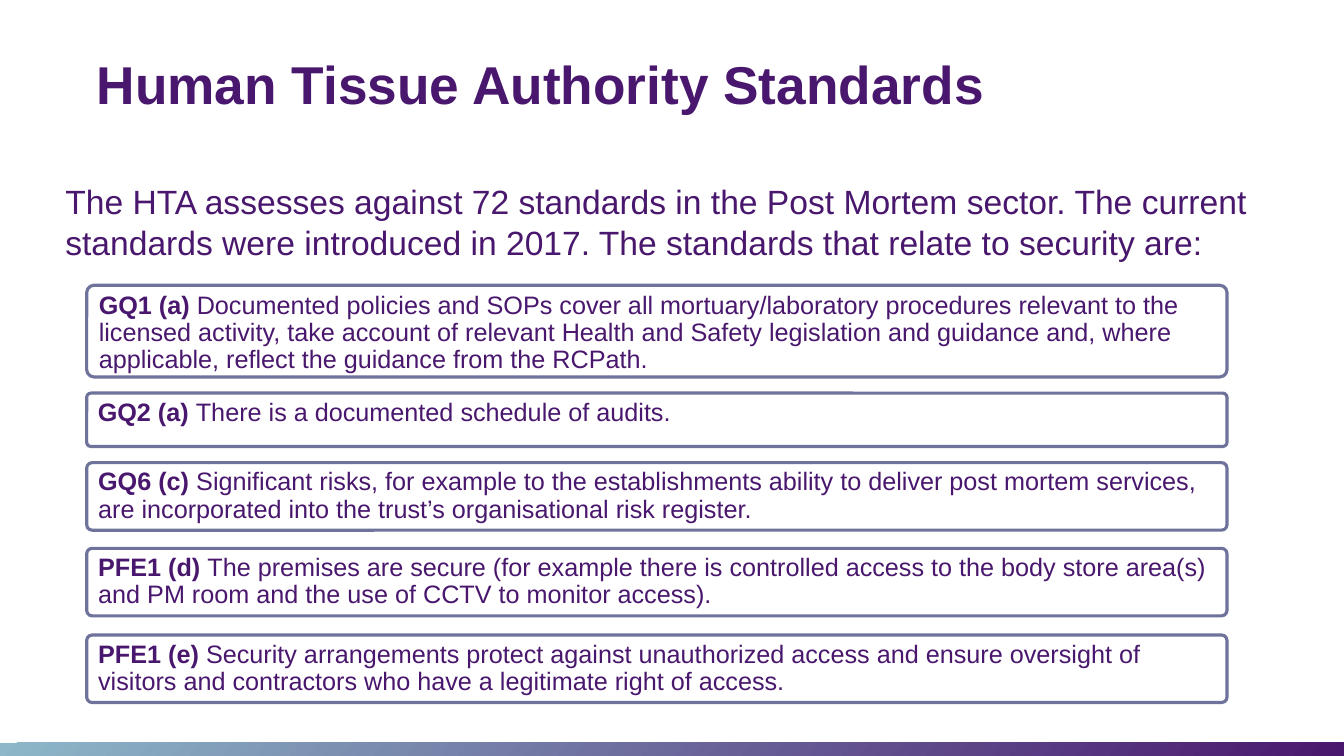
from pptx import Presentation
from pptx.dml.color import RGBColor
from pptx.enum.shapes import MSO_SHAPE
from pptx.enum.text import MSO_ANCHOR, PP_ALIGN
from pptx.util import Inches, Pt

RECT = MSO_SHAPE.RECTANGLE
ROUND = MSO_SHAPE.ROUNDED_RECTANGLE
TOP = MSO_ANCHOR.TOP
BASE = MSO_ANCHOR.BOTTOM
LEFT = PP_ALIGN.LEFT
PLUM = RGBColor(0x49, 0x17, 0x6D)
SLATE = RGBColor(0x6F, 0x73, 0x9B)
AQUA = RGBColor(0x8D, 0xB8, 0xC9)
WHITE = RGBColor(0xFF, 0xFF, 0xFF)
FONT = "Arial"

deck = Presentation()
deck.slide_width = Inches(13.33)
deck.slide_height = Inches(7.5)
UNIT = deck.slide_width // 1333
slide = deck.slides.add_slide(deck.slide_layouts[6])
shapes = slide.shapes


def grid(*cells):
    return [cell * UNIT for cell in cells]


def put(text, frame, size=18, lead="", bold=False, lines=0.9, anchor=TOP):
    frame.word_wrap = True
    frame.vertical_anchor = anchor
    para = frame.paragraphs[0]
    para.alignment = LEFT
    para.line_spacing = lines
    for words, heavy in ((lead, True), (text, bold)):
        if words:
            run = para.add_run()
            run.text = words
            run.font.name = FONT
            run.font.size = Pt(size)
            run.font.bold = heavy
            run.font.color.rgb = PLUM


band = shapes.add_shape(RECT, *grid(0, 737, 1333, 13))
band.shadow.inherit = False
band.line.fill.background()
band.fill.gradient()
band.fill.gradient_angle = 320
for stop, color in zip(band.fill.gradient_stops, (AQUA, PLUM)):
    stop.color.rgb = color

title = shapes.add_textbox(*grid(86, 55, 929, 65))
put("Human Tissue Authority Standards", title.text_frame,
    size=38, bold=True, anchor=BASE)

intro = shapes.add_textbox(*grid(55, 175, 1193, 91))
put("The HTA assesses against 72 standards in the Post Mortem sector. "
    "The current standards were introduced in 2017. "
    "The standards that relate to security are:",
    intro.text_frame, size=24, lines=1.0)

RULES = [
    (283, 91, "GQ1 (a) ",
     "Documented policies and SOPs cover all mortuary/laboratory procedures "
     "relevant to the licensed activity, take account of relevant Health and "
     "Safety legislation and guidance and, where applicable, reflect the "
     "guidance from the RCPath."),
    (390, 53, "GQ2 (a) ", "There is a documented schedule of audits."),
    (459, 67, "GQ6 (c) ",
     "Significant risks, for example to the establishments ability to deliver "
     "post mortem services, are incorporated into the trust’s organisational "
     "risk register."),
    (544, 67, "PFE1 (d) ",
     "The premises are secure (for example there is controlled access to the "
     "body store area(s) and PM room and the use of CCTV to monitor access)."),
    (630, 67, "PFE1 (e) ",
     "Security arrangements protect against unauthorized access and ensure "
     "oversight of visitors and contractors who have a legitimate right of "
     "access."),
]

for top, tall, code, rule in RULES:
    card = shapes.add_shape(ROUND, *grid(86, top, 1131, tall))
    card.adjustments[0] = 0.08
    card.shadow.inherit = False
    card.fill.solid()
    card.fill.fore_color.rgb = WHITE
    card.line.color.rgb = SLATE
    card.line.width = Pt(2.25)
    put(rule, card.text_frame, lead=code)

deck.save("out.pptx")
